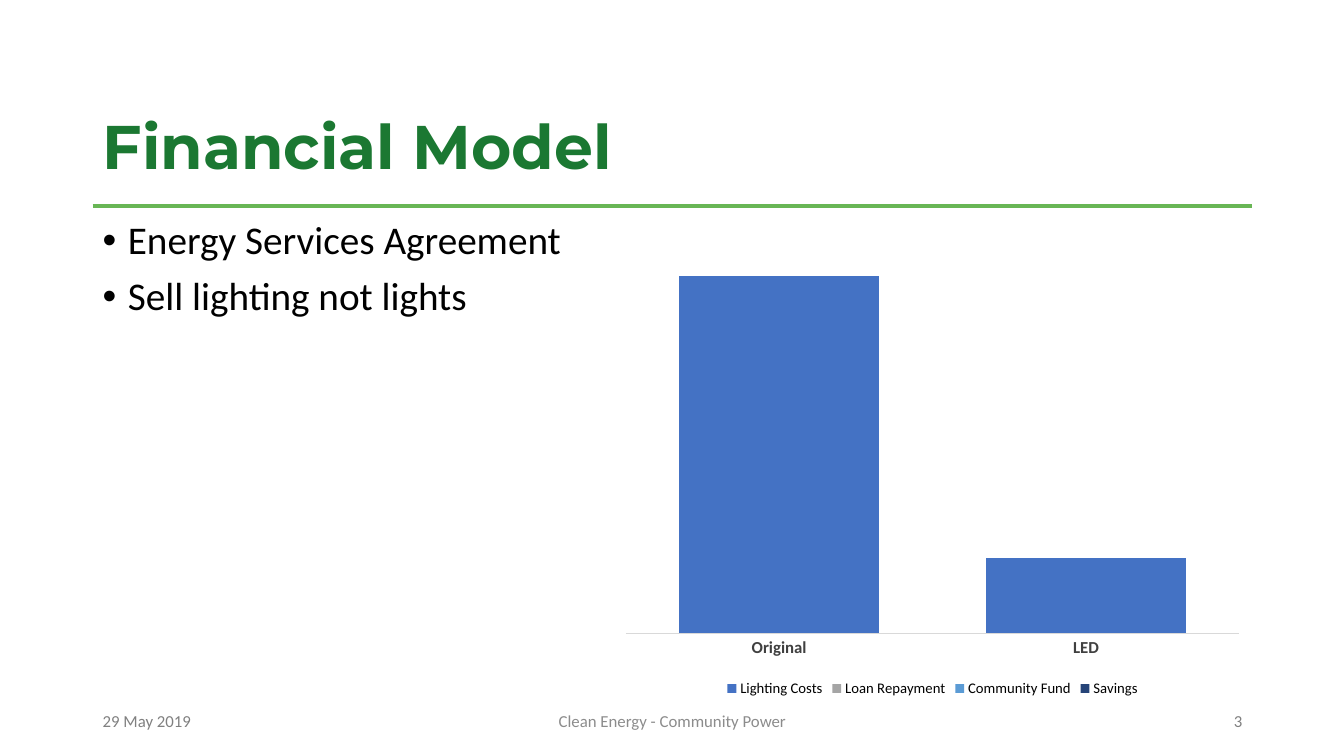
from lxml import etree
from pptx import Presentation
from pptx.chart.data import CategoryChartData
from pptx.dml.color import RGBColor
from pptx.enum import chart as ch, shapes, text
from pptx.oxml import parse_xml
from pptx.oxml.ns import nsdecls, qn
from pptx.util import Inches, Pt

DARK_GREEN = RGBColor(0x1B, 0x78, 0x32)
GREEN = RGBColor(0x68, 0xB6, 0x55)
BLACK = RGBColor(0, 0, 0)
GREY = RGBColor(0x80, 0x80, 0x80)
LIGHT_GREY = RGBColor(0x8C, 0x8C, 0x8C)
AXIS_TEXT = RGBColor(0x40, 0x40, 0x40)
AXIS_LINE = RGBColor(0xD9, 0xD9, 0xD9)
SERIES = [
    ("Lighting Costs", (100, 21), RGBColor(0x44, 0x72, 0xC4)),
    ("Loan Repayment", (0, 0), RGBColor(0xA5, 0xA5, 0xA5)),
    ("Community Fund", (0, 0), RGBColor(0x5B, 0x9B, 0xD5)),
    ("Savings", (0, 0), RGBColor(0x26, 0x44, 0x78)),
]
LEFT, RIGHT = 0.92, 12.42
BODY_TOP = 2.14


def set_font(font, size, color, name="Calibri", bold=False):
    values = {"size": Pt(size), "name": name, "bold": bold}
    for key, value in values.items():
        setattr(font, key, value)
    font.color.rgb = color


def add_text(box, lines, anchor, align, *font, bullet=False):
    """Add a wrapped text box with one paragraph per line."""
    tf = s.shapes.add_textbox(*map(Inches, box)).text_frame
    tf.word_wrap = True
    tf.vertical_anchor = anchor
    for i, line in enumerate(lines):
        p = tf.paragraphs[0] if i == 0 else tf.add_paragraph()
        p.alignment = align
        p.line_spacing = 0.9 if bullet else 1.0
        if bullet:
            if i:
                p.space_before = Pt(10)
            pPr = p._p.get_or_add_pPr()
            pPr.set("marL", str(Inches(0.25)))
            pPr.set("indent", str(Inches(-0.25)))
            etree.SubElement(pPr, qn("a:buFont")).set("typeface", "Arial")
            etree.SubElement(pPr, qn("a:buChar")).set("char", "•")
        r = p.add_run()
        r.text = line
        set_font(r.font, *font)


prs = Presentation()
prs.slide_width, prs.slide_height = Inches(13.33), Inches(7.5)
s = prs.slides.add_slide(prs.slide_layouts[6])
anchors, aligns = text.MSO_ANCHOR, text.PP_ALIGN

# Title and rule
rule = s.shapes.add_connector(shapes.MSO_CONNECTOR.STRAIGHT, Inches(LEFT), Inches(2.04),
                              Inches(RIGHT), Inches(2.04))
rule.line.color.rgb = GREEN
rule.line.width = Pt(3)
etree.SubElement(rule._element.spPr, qn("a:effectLst"))
add_text((LEFT, 0.4, 10.07, 1.45), ["Financial Model"], anchors.BOTTOM, aligns.LEFT,
         44, DARK_GREEN, "Montserrat", True)

# Footer
for left, width, line, align, color in [
    (LEFT, 3, "29 May 2019", aligns.LEFT, GREY),
    (4.42, 4.5, "Clean Energy - Community Power", aligns.CENTER, LIGHT_GREY),
    (RIGHT - 3, 3, "3", aligns.RIGHT, GREY),
]:
    add_text((left, 6.95, width, 0.4), [line], anchors.MIDDLE, align, 12, color)

# Cost chart
data = CategoryChartData()
data.categories = ["Original", "LED"]
for name, values, _ in SERIES:
    data.add_series(name, values)
chart = s.shapes.add_chart(ch.XL_CHART_TYPE.COLUMN_STACKED, Inches(6.08), Inches(BODY_TOP),
                           Inches(6.34), Inches(4.82), data).chart
chart.has_title = False
set_font(chart.font, 10, BLACK)
chart.has_legend = True
chart.legend.position = ch.XL_LEGEND_POSITION.BOTTOM
chart.legend.include_in_layout = False
set_font(chart.legend.font, 10.5, BLACK)

plot = chart.plots[0]
plot.gap_width, plot.overlap, plot.vary_by_categories = 53, 100, False
for series, (_, _, color) in zip(plot.series, SERIES):
    series.format.fill.solid()
    series.format.fill.fore_color.rgb = color

costs = chart.value_axis
costs.visible = costs.has_major_gridlines = False
costs.minimum_scale, costs.maximum_scale = 0, 110
cats = chart.category_axis
cats.major_tick_mark = ch.XL_TICK_MARK.NONE
cats.format.line.color.rgb = AXIS_LINE
cats.format.line.width = Pt(0.75)
set_font(cats.tick_labels.font, 12, AXIS_TEXT, bold=True)

plot_area = chart._chartSpace.chart.plotArea
for old in plot_area.findall(qn("c:layout")):
    plot_area.remove(old)
frame = {"xMode": "edge", "yMode": "edge", "x": 0.02, "y": 0.05, "w": 0.96, "h": 0.81}
parts = "".join(f'<c:{key} val="{value}"/>' for key, value in frame.items())
plot_area.insert(0, parse_xml(
    f'<c:layout {nsdecls("c")}><c:manualLayout><c:layoutTarget val="inner"/>'
    f"{parts}</c:manualLayout></c:layout>"))

# Key points
add_text((LEFT, BODY_TOP, 5.52, 4.62), ["Energy Services Agreement", "Sell lighting not lights"],
         anchors.TOP, aligns.LEFT, 28, BLACK, bullet=True)

prs.save("out.pptx")
